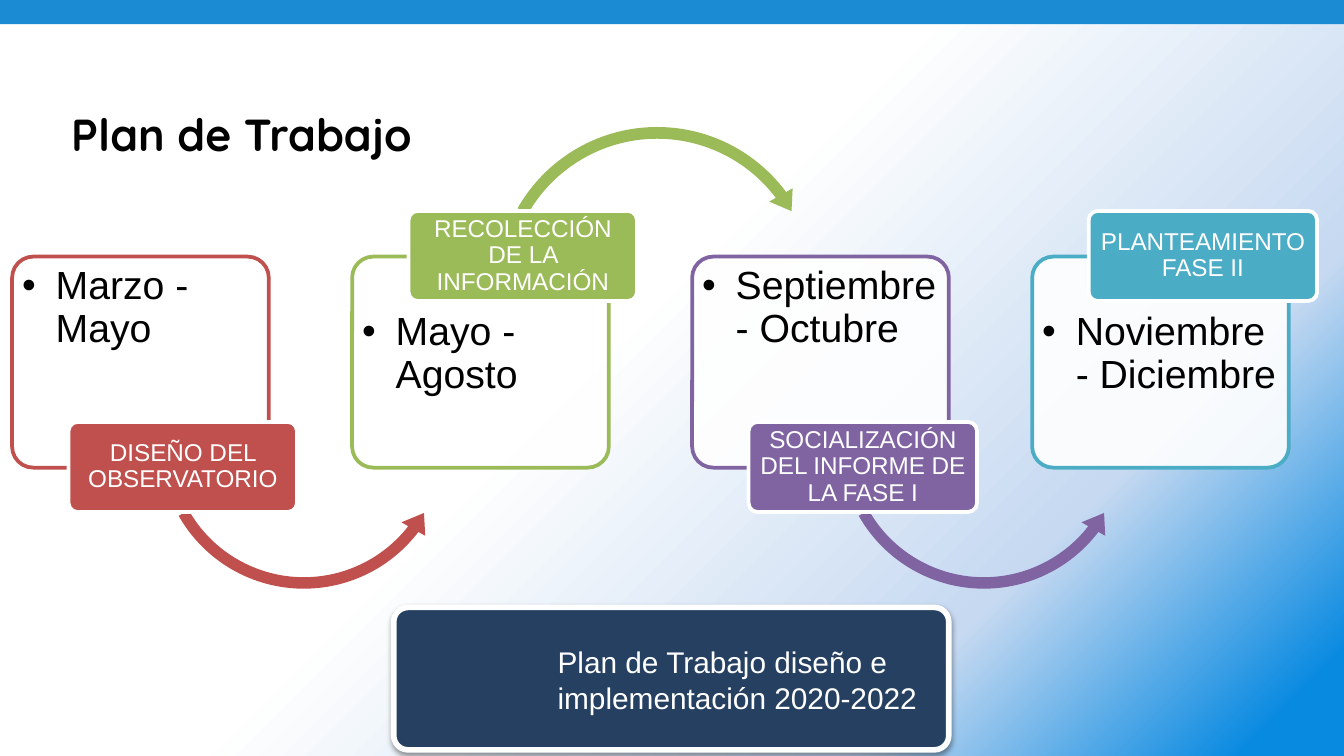
from collections import namedtuple

from lxml import etree
from pptx import Presentation
from pptx.dml.color import RGBColor
from pptx.enum.shapes import MSO_SHAPE
from pptx.enum.text import MSO_ANCHOR, PP_ALIGN
from pptx.oxml import parse_xml
from pptx.oxml.ns import nsdecls, qn
from pptx.util import Inches, Pt

RECT, ROUNDED = MSO_SHAPE.RECTANGLE, MSO_SHAPE.ROUNDED_RECTANGLE
ARC_OVER, ARC_UNDER = MSO_SHAPE.CIRCULAR_ARROW, MSO_SHAPE.LEFT_CIRCULAR_ARROW
TOP, MIDDLE = MSO_ANCHOR.TOP, MSO_ANCHOR.MIDDLE
LEFT, CENTER = PP_ALIGN.LEFT, PP_ALIGN.CENTER

WHITE, BLACK = RGBColor(255, 255, 255), RGBColor(0, 0, 0)
BAR_BLUE, NAVY = RGBColor(0x1B, 0x8B, 0xD4), RGBColor(0x25, 0x40, 0x61)
RED, GREEN = RGBColor(0xC0, 0x50, 0x4D), RGBColor(0x9B, 0xBB, 0x59)
PURPLE, TEAL = RGBColor(0x80, 0x64, 0xA2), RGBColor(0x4B, 0xAC, 0xC6)
BACKGROUND_STOPS = [(45, WHITE), (76, RGBColor(0xC6, 0xD9, 0xF1)),
                    (95, RGBColor(0x09, 0x8A, 0xE1))]

Box = namedtuple("Box", "left top width height")
SLIDE = Box(0, 0, 10, 10 * 9 / 16)
FIRST_CARD = Box(0.09, 1.91, 1.91, 1.57)
CARD_PITCH = 2.53

# Places in percent of the card, and arrow adjustments in percent
LOW = {"text_top": 1.9, "label_top": 78.3, "arc": ARC_UNDER,
       "arc_at": (54.5, 17.2), "arc_size": 118.3,
       "adjust": (3.8, 480, 2255.5, 9024.5, 4.5)}
HIGH = {"text_top": 23.6, "label_top": -21.7, "arc": ARC_OVER,
        "arc_at": (53.4, -65), "arc_size": 130.9,
        "adjust": (3.5, 429.4, 19395.1, 12575.5, 4)}

STEPS = [
    ("Marzo - Mayo", "DISEÑO DEL OBSERVATORIO", RED),
    ("Mayo - Agosto", "RECOLECCIÓN DE LA INFORMACIÓN", GREEN),
    ("Septiembre - Octubre", "SOCIALIZACIÓN DEL INFORME DE LA FASE I", PURPLE),
    ("Noviembre - Diciembre", "PLANTEAMIENTO FASE II", TEAL),
]

DATE_FONT = {"name": "Arial", "size": Pt(21)}
LABEL_FONT = {"name": "Arial", "size": Pt(13)}
BANNER_FONT = {"name": "Arial", "size": Pt(16)}
TITLE_FONT = {"name": "Quicksand", "size": Pt(24), "bold": True}


def share(box, left, top, width, height):
    """Box given by percentages of another box."""
    return Box(box.left + left * box.width / 100,
               box.top + top * box.height / 100,
               width * box.width / 100, height * box.height / 100)


def inches(box):
    return [Inches(length) for length in box]


def add_shape(page, kind, box, fill, line=None, line_width=2, adjust=()):
    shape = page.shapes.add_shape(kind, *inches(box))
    shape.shadow.inherit = False
    shape.fill.solid()
    shape.fill.fore_color.rgb = fill
    if line is None:
        shape.line.fill.background()
    else:
        shape.line.color.rgb = line
        shape.line.width = Pt(line_width)
    for index, percent in enumerate(adjust):
        shape.adjustments[index] = percent / 100
    return shape


def write(shape, text, font, color, align=LEFT, anchor=MIDDLE,
          insets=(0.1, 0.05), spacing=None, bullet=False):
    frame = shape.text_frame
    frame.word_wrap = True
    frame.vertical_anchor = anchor
    frame.margin_left = frame.margin_right = Inches(insets[0])
    frame.margin_top = frame.margin_bottom = Inches(insets[1])
    para = frame.paragraphs[0]
    para.alignment = align
    if bullet:
        properties = para._p.get_or_add_pPr()
        properties.set("marL", str(Inches(0.25)))
        properties.set("indent", str(-Inches(0.25)))
        etree.SubElement(properties, qn("a:buFont"), typeface="Arial")
        etree.SubElement(properties, qn("a:buChar"), char="•")
    if spacing:
        para.line_spacing = spacing
    span = para.add_run()
    span.text = text
    span.font.color.rgb = color
    for name, value in font.items():
        setattr(span.font, name, value)


def paint_background(page):
    page.background.fill.gradient()
    gradient = page.element.find(".//" + qn("a:gradFill"))
    stops = "".join(
        f'<a:gs pos="{percent * 1000}"><a:srgbClr val="{color}"/></a:gs>'
        for percent, color in BACKGROUND_STOPS)
    for child in list(gradient):
        gradient.remove(child)
    gradient.append(parse_xml(f'<a:gsLst {nsdecls("a")}>{stops}</a:gsLst>'))
    etree.SubElement(gradient, qn("a:lin"), ang=str(45 * 60000), scaled="0")


def add_header(page, box):
    add_shape(page, RECT, share(box, 0, -0.2, 100, 3.4), BAR_BLUE)
    title = page.shapes.title
    title.left, title.top, title.width, title.height = inches(
        share(box, 4.3, 8.7, 75.6, 18))
    write(title, "Plan de Trabajo", TITLE_FONT, BLACK)


def add_banner(page, box):
    panel = add_shape(page, ROUNDED, box, NAVY, WHITE, 3, adjust=(10,))
    effects = panel._element.spPr.find(qn("a:effectLst"))
    effects.append(parse_xml(
        f'<a:outerShdw {nsdecls("a")} blurRad="{Pt(3.1)}" dist="{Pt(1.6)}" '
        f'dir="{90 * 60000}" rotWithShape="0"><a:srgbClr val="{BLACK}">'
        '<a:alpha val="38000"/></a:srgbClr></a:outerShdw>'))
    caption = page.shapes.add_textbox(*inches(share(box, 26.6, 0, 72.4, 101)))
    write(caption, "Plan de Trabajo diseño e implementación 2020-2022",
          BANNER_FONT, WHITE, insets=(0.12, 0.12))


def add_step(page, box, dates, name, color, style, has_arrow):
    # Card with its dates
    card = add_shape(page, ROUNDED, box, WHITE, color, adjust=(10,))
    fill_color = card._element.spPr.find(qn("a:solidFill"))[0]
    etree.SubElement(fill_color, qn("a:alpha"), val="90000")
    period = page.shapes.add_textbox(
        *inches(share(box, 1.8, style["text_top"], 96.3, 73.9)))
    write(period, dates, DATE_FONT, BLACK, anchor=TOP, insets=(0.04, 0.04),
          spacing=0.9, bullet=True)

    # Curved arrow to the next card
    if has_arrow:
        arc = share(box, *style["arc_at"], style["arc_size"], 0)
        arc = arc._replace(height=arc.width)
        add_shape(page, style["arc"], arc, color, adjust=style["adjust"])

    # Name of the step
    label = add_shape(page, ROUNDED,
                      share(box, 22, style["label_top"], 89, 42.7),
                      color, WHITE, adjust=(10,))
    write(label, name, LABEL_FONT, WHITE, CENTER, insets=(0.03, 0.02),
          spacing=0.9)


def add_process(page, first_card):
    for index, (dates, name, color) in enumerate(STEPS):
        card = first_card._replace(left=first_card.left + index * CARD_PITCH)
        style = HIGH if index % 2 else LOW
        add_step(page, card, dates, name, color, style,
                 has_arrow=index < len(STEPS) - 1)


def main():
    deck = Presentation()
    deck.slide_width, deck.slide_height = inches(SLIDE)[2:]
    page = deck.slides.add_slide(deck.slide_layouts[5])
    paint_background(page)
    add_header(page, SLIDE)
    add_banner(page, Box(2.93, 4.52, 4.13, 1.06))
    add_process(page, FIRST_CARD)
    deck.save("out.pptx")


if __name__ == "__main__":
    main()
